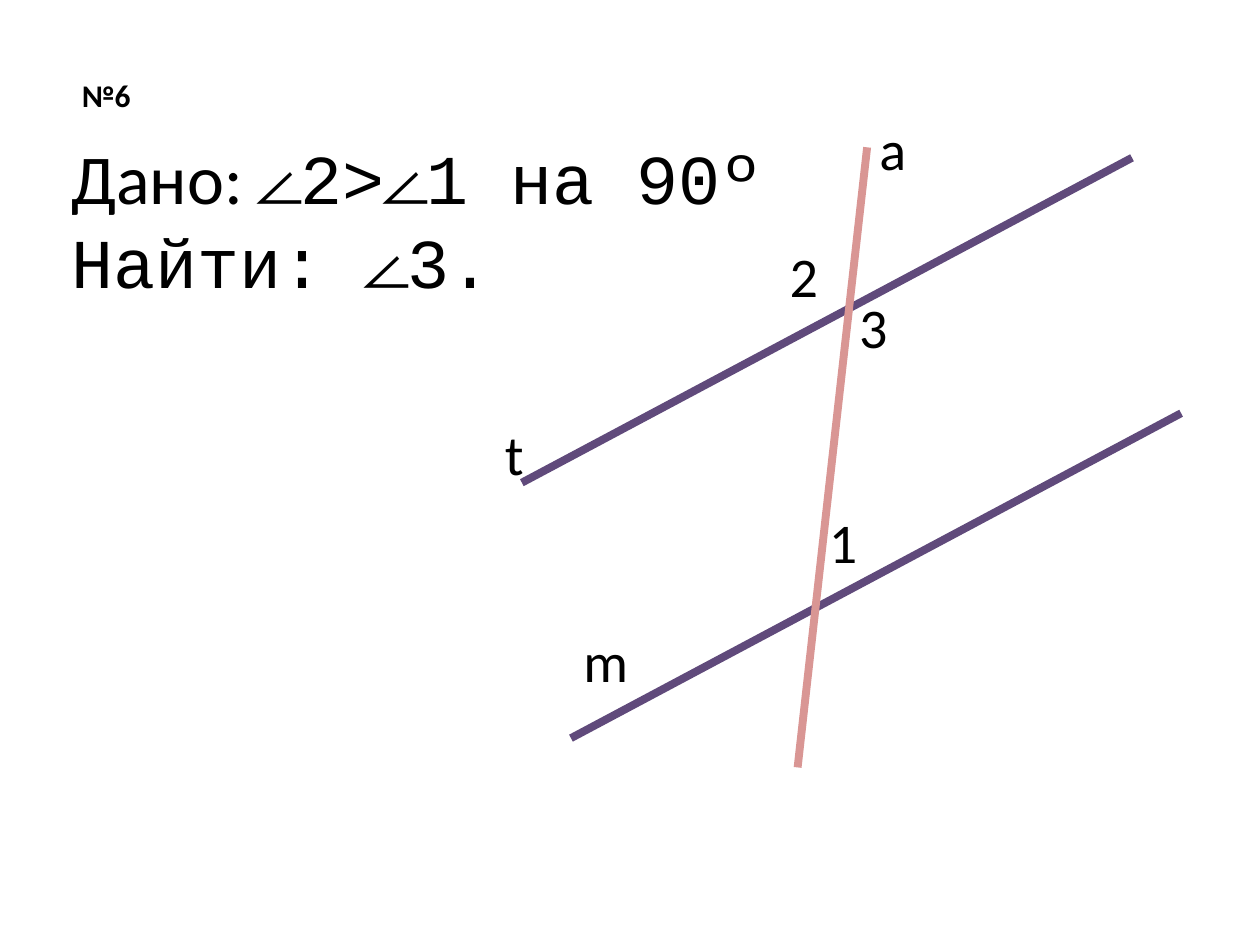
from lxml.etree import SubElement
from pptx import Presentation
from pptx.dml.color import RGBColor
from pptx.enum.shapes import MSO_CONNECTOR as Conn
from pptx.enum.text import MSO_AUTO_SIZE as AutoSize
from pptx.oxml.ns import qn
from pptx.util import Cm, Pt

BLACK = RGBColor(0x00, 0x00, 0x00)
PURPLE = RGBColor(0x60, 0x4A, 0x7B)
PINK = RGBColor(0xD9, 0x96, 0x94)
SANS, MONO = "Calibri", "Courier New"


class Sketch:
    """Holds the style and the slide being drawn."""

    def __init__(self, slide, line_width=4.5):
        self.s = slide
        self.line_width = Pt(line_width)

    def line(self, x1, y1, x2, y2, color):
        c = self.s.shapes.add_connector(Conn.STRAIGHT, Cm(x1), Cm(y1), Cm(x2), Cm(y2))
        c.line.color.rgb = color
        c.line.width = self.line_width
        SubElement(c._element.spPr, qn("a:effectLst"))

    def text(self, x, y, w, h, paragraphs, size, bold=None):
        """Each paragraph is a list of (text, font name) runs."""
        tf = self.s.shapes.add_textbox(Cm(x), Cm(y), Cm(w), Cm(h)).text_frame
        tf.word_wrap = False
        tf.auto_size = AutoSize.SHAPE_TO_FIT_TEXT
        for i, runs in enumerate(paragraphs):
            p = tf.add_paragraph() if i else tf.paragraphs[0]
            for content, font in runs:
                r = p.add_run()
                r.text = content
                for key, value in {"name": font, "size": Pt(size), "bold": bold}.items():
                    setattr(r.font, key, value)
                r.font.color.rgb = BLACK

    def label(self, x, y, w, content):
        self.text(x, y, w, 1.62, [[(content, SANS)]], 32)


def main():
    prs = Presentation()
    prs.slide_width, prs.slide_height = Cm(25.4), Cm(19.05)
    sketch = Sketch(prs.slides.add_slide(prs.slide_layouts[6]))

    # Problem number
    sketch.text(1.4, 1.4, 1.8, 1.02, [[("№6", SANS)]], 18, bold=True)

    # Parallel lines t and m, crossed by a
    for x, y in [(10.52, 9.73), (11.51, 14.88)]:
        sketch.line(x, y, x + 12.3, y - 6.55, PURPLE)
    sketch.line(17.48, 2.97, 16.08, 15.47, PINK)

    # Names of lines and angles
    for x, y, w, name in [
        (9.93, 8.33, 0.97, "t"),
        (17.48, 2.18, 1.19, "a"),
        (11.51, 12.5, 1.63, "m"),
        (15.67, 4.75, 1.24, "2"),
        (17.07, 5.77, 1.24, "3"),
        (16.46, 10.11, 1.24, "1"),
    ]:
        sketch.label(x, y, w, name)

    # Given and sought
    sketch.text(1.19, 2.59, 15.52, 3.68, [
        [("Дано: ", SANS), ("∠2>∠1 на 90º", MONO)],
        [("Найти: ∠3.", MONO)],
    ], 40)

    prs.save("out.pptx")


if __name__ == "__main__":
    main()
